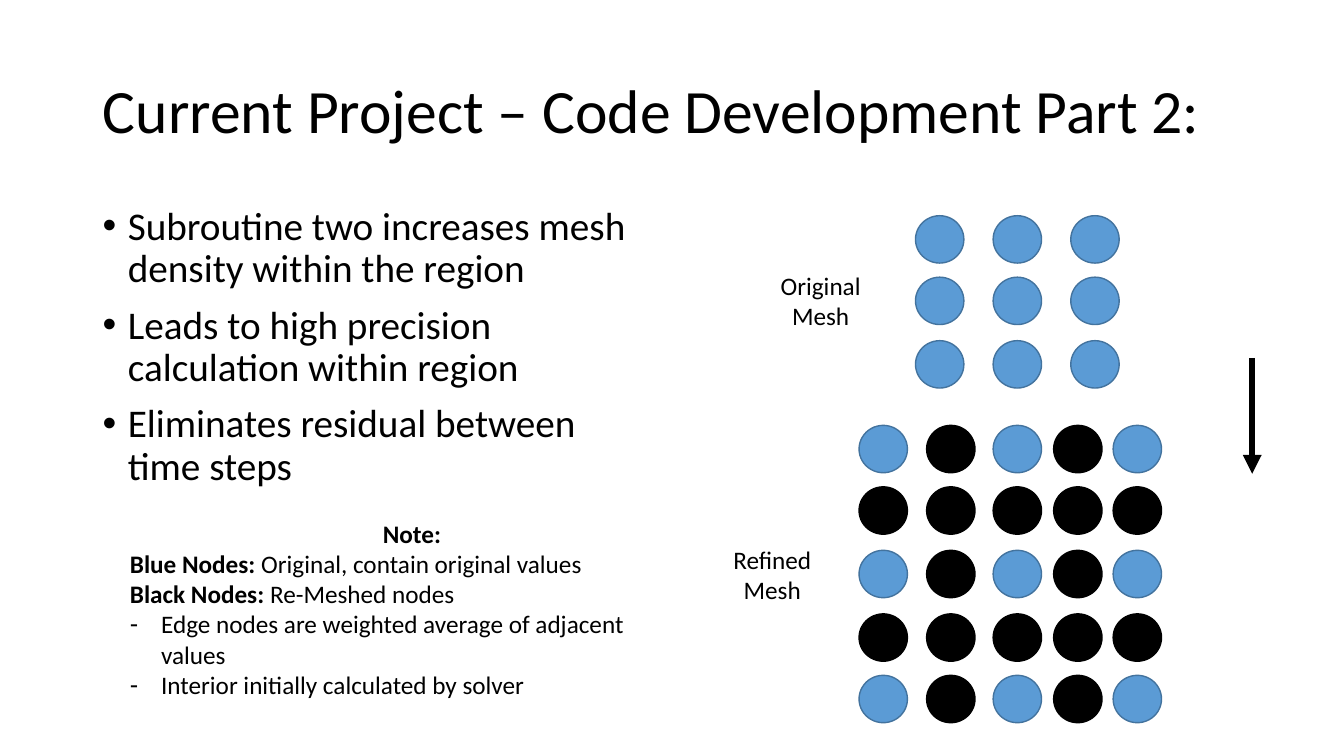
"""Build the slide on mesh refinement, with the coarse and the refined mesh."""
from lxml import etree
from pptx import Presentation
from pptx import util as u
from pptx.dml.color import RGBColor
from pptx.enum import shapes, text
from pptx.oxml.ns import qn

PX = 9144
HUES = {"ink": "000000", "blue": "5B9BD5", "edge": "43739E"}
INK, BLUE, EDGE = (RGBColor.from_string(HUES[k]) for k in ("ink", "blue", "edge"))
LEFT, MID = text.PP_ALIGN.LEFT, text.PP_ALIGN.CENTER


def write(box, place, size, paras, align=LEFT):
    """Place a box and fill it with paragraphs of (bold, words) runs."""
    box.left, box.top, box.width, box.height = (v * PX for v in place)
    frame = box.text_frame
    frame.word_wrap = True
    frame.auto_size = text.MSO_AUTO_SIZE.NONE
    for i, runs in enumerate(paras):
        para = frame.paragraphs[0] if i == 0 else frame.add_paragraph()
        para.alignment = align
        for bold, words in runs:
            run = para.add_run()
            run.text = words
            font = run.font
            font.name, font.size, font.bold = "Calibri", u.Pt(size), bold
            font.color.rgb = INK
    return frame


def bullet(para, mark, indent):
    """Give a paragraph a bullet with a hanging indent."""
    props = para._p.get_or_add_pPr()
    props.set("marL", str(indent * PX))
    props.set("indent", str(-indent * PX))
    etree.SubElement(props, qn("a:buFont")).set("typeface", "Arial")
    etree.SubElement(props, qn("a:buChar")).set("char", mark)


deck = Presentation()
deck.slide_width, deck.slide_height = 1333 * PX, 750 * PX
slide = deck.slides.add_slide(deck.slide_layouts[5])
items = slide.shapes

title = write(items.title, (92, 40, 1150, 145), 44,
              [[(False, "Current Project – Code Development Part 2:")]])
title.vertical_anchor = text.MSO_ANCHOR.MIDDLE
title.paragraphs[0].line_spacing = 0.9

points = ["Subroutine two increases mesh density within the region",
          "Leads to high precision calculation within region",
          "Eliminates residual between time steps"]
body = write(items.add_textbox(0, 0, 0, 0), (92, 200, 567, 476), 28,
             [[(False, point)] for point in points])
for para in body.paragraphs:
    para.line_spacing = 0.9
    para.space_before = u.Pt(10)
    bullet(para, "•", 25)

coarse = [(x, y, True) for y in (214, 275, 338) for x in (908, 985, 1062)]
fine = [(x, y, row % 2 == 0 and col % 2 == 0)
        for row, y in enumerate((422, 483, 546, 609, 670))
        for col, x in enumerate((852, 919, 985, 1045, 1104))]
for x, y, old in coarse + fine:
    node = items.add_shape(shapes.MSO_SHAPE.OVAL, x * PX, y * PX, 48 * PX, 47 * PX)
    node.shadow.inherit = False
    node.fill.solid()
    node.fill.fore_color.rgb = BLUE if old else INK
    node.line.color.rgb = EDGE if old else INK
    node.line.width = u.Pt(1)

for words, x, y in (("Original Mesh", 746, 263), ("Refined Mesh", 698, 535)):
    write(items.add_textbox(0, 0, 0, 0), (x, y, 136, 71), 18, [[(False, words)]], MID)

note = write(items.add_textbox(0, 0, 0, 0), (119, 509, 579, 192), 18, [
    [(True, "Note:")],
    [(True, "Blue Nodes: "), (False, "Original, contain original values")],
    [(True, "Black Nodes: "), (False, "Re-Meshed nodes")],
    [(False, "Edge nodes are weighted average of adjacent values")],
    [(False, "Interior initially calculated by solver")]])
note.paragraphs[0].alignment = MID
for para in note.paragraphs[3:]:
    bullet(para, "-", 31)

arrow = items.add_connector(shapes.MSO_CONNECTOR.STRAIGHT,
                            1242 * PX, 355 * PX, 1242 * PX, 470 * PX)
arrow.line.color.rgb = INK
arrow.line.width = u.Pt(4.5)
etree.SubElement(arrow.line._get_or_add_ln(), qn("a:tailEnd")).set("type", "triangle")
etree.SubElement(arrow._element.spPr, qn("a:effectLst"))

deck.save("out.pptx")
